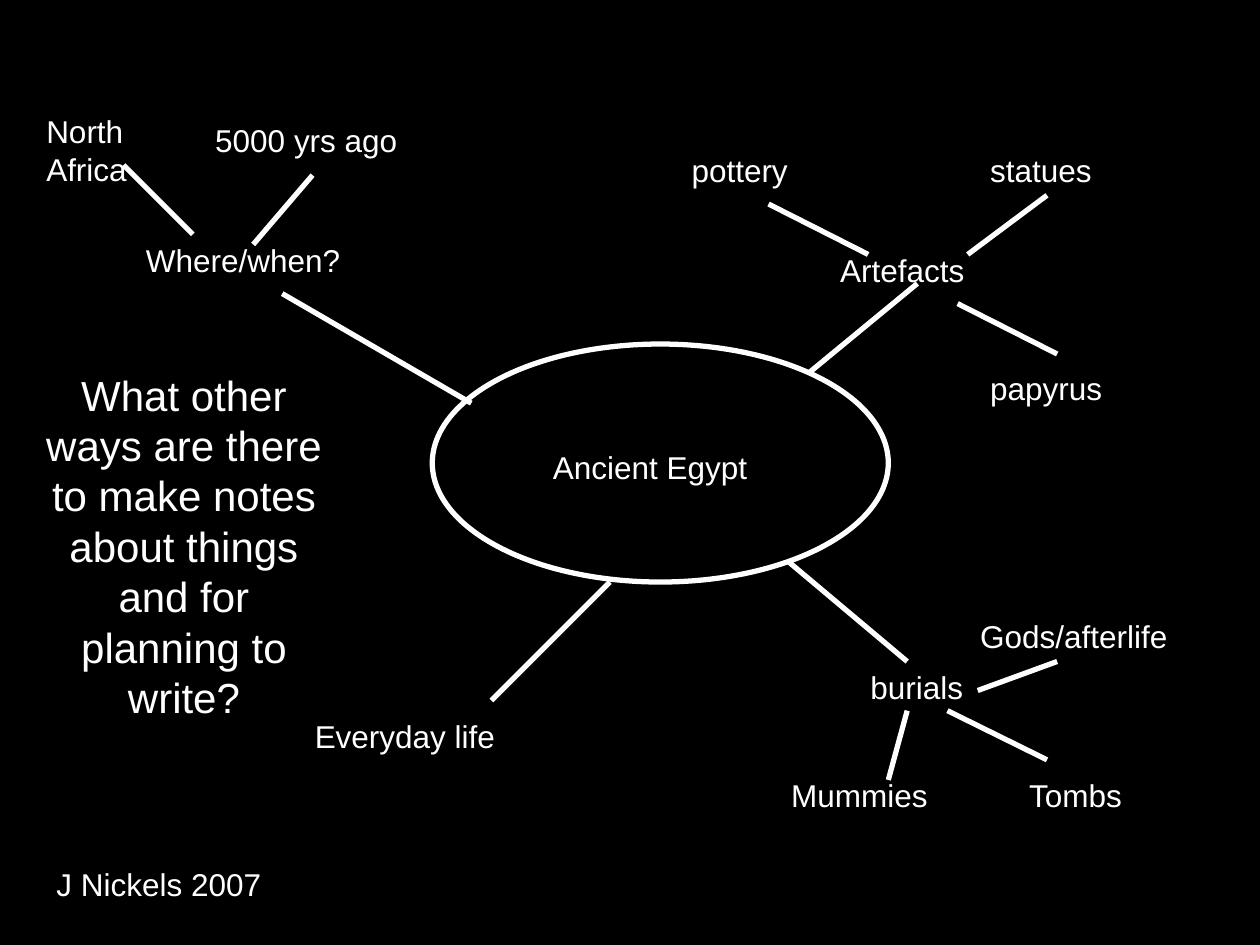
"""Build a mind map slide about Ancient Egypt."""
from lxml import etree
from pptx import Presentation
from pptx.dml.color import RGBColor
from pptx.enum import shapes, text
from pptx.oxml import ns
from pptx.util import Pt

BLACK = RGBColor(0x00, 0x00, 0x00)
WHITE = RGBColor(0xFF, 0xFF, 0xFF)
LINE_WIDTH = 3

HUB = (247, 196.6, 260.6, 136)
BRANCHES = [
    (161.3, 167.8, 269.3, 230.4),
    (280.8, 400.3, 348.5, 332.6),
    (524.2, 162, 462.2, 213.1),
    (450.7, 321.1, 518.4, 378),
]
TWIGS = [
    (144.7, 139.7, 178.6, 100.1),
    (110.2, 133.9, 70.6, 94.3),
    (439.2, 116.6, 496.1, 145.4),
    (598.3, 111.6, 553, 145.4),
    (547.2, 173.5, 604.1, 202.3),
    (541.4, 406.1, 598.3, 434.2),
    (518.4, 406.1, 507.6, 445.7),
    (604.1, 378, 558.7, 394.6),
]
LABELS = [
    ("Ancient Egypt", 308.9, 252.7, 136),
    ("Where/when?", 76.3, 133.9, 136),
    ("Artefacts", 473, 139.7, 90.7),
    ("burials", 490.3, 378, 79.2),
    ("Everyday life", 172.8, 406.1, 136),
    ("5000 yrs ago", 115.9, 65.5, 136),
    ("pottery", 388.1, 82.8, 90.7),
    ("statues", 558.7, 82.8, 90.7),
    ("papyrus", 558.7, 207.4, 90.7),
    ("Mummies", 445, 439.9, 113.8),
    ("Tombs", 581, 439.9, 90.7),
    ("Gods/afterlife", 553, 349.2, 124.6),
    ("J Nickels 2007", 25.2, 491, 283.7),
]
PLACE = ("North Africa", 19.4, 60.5, 108)
QUESTION = ("What other ways are there to make notes about things "
            "and for planning to write?", 14.4, 207.4, 181.4)


def add_text(slide, words, left, top, width, height=29, size=18,
             align=text.PP_ALIGN.LEFT):
    box = slide.shapes.add_textbox(Pt(left), Pt(top), Pt(width), Pt(height))
    frame = box.text_frame
    frame.word_wrap = True
    frame.auto_size = text.MSO_AUTO_SIZE.SHAPE_TO_FIT_TEXT
    paragraph = frame.paragraphs[0]
    paragraph.alignment = align
    run = paragraph.add_run()
    run.text = words
    run.font.name = "Arial"
    run.font.size = Pt(size)
    run.font.color.rgb = WHITE


def style_line(shape):
    shape.line.color.rgb = WHITE
    shape.line.width = Pt(LINE_WIDTH)


def add_hub(slide):
    ellipse = slide.shapes.add_shape(shapes.MSO_SHAPE.OVAL, *map(Pt, HUB))
    ellipse.shadow.inherit = False
    ellipse.fill.background()
    style_line(ellipse)


def add_line(slide, ends):
    line = slide.shapes.add_connector(
        shapes.MSO_CONNECTOR.STRAIGHT, *map(Pt, ends))
    style_line(line)
    etree.SubElement(line.element.spPr, ns.qn("a:effectLst"))


def main():
    presentation = Presentation()
    presentation.slide_width, presentation.slide_height = Pt(720), Pt(540)
    slide = presentation.slides.add_slide(presentation.slide_layouts[6])
    slide.background.fill.solid()
    slide.background.fill.fore_color.rgb = BLACK
    add_hub(slide)
    for ends in BRANCHES + TWIGS:
        add_line(slide, ends)
    for label in LABELS:
        add_text(slide, *label)
    add_text(slide, *PLACE, height=50.4)
    add_text(slide, *QUESTION, height=208.8, size=24,
             align=text.PP_ALIGN.CENTER)
    presentation.save("out.pptx")


if __name__ == "__main__":
    main()
